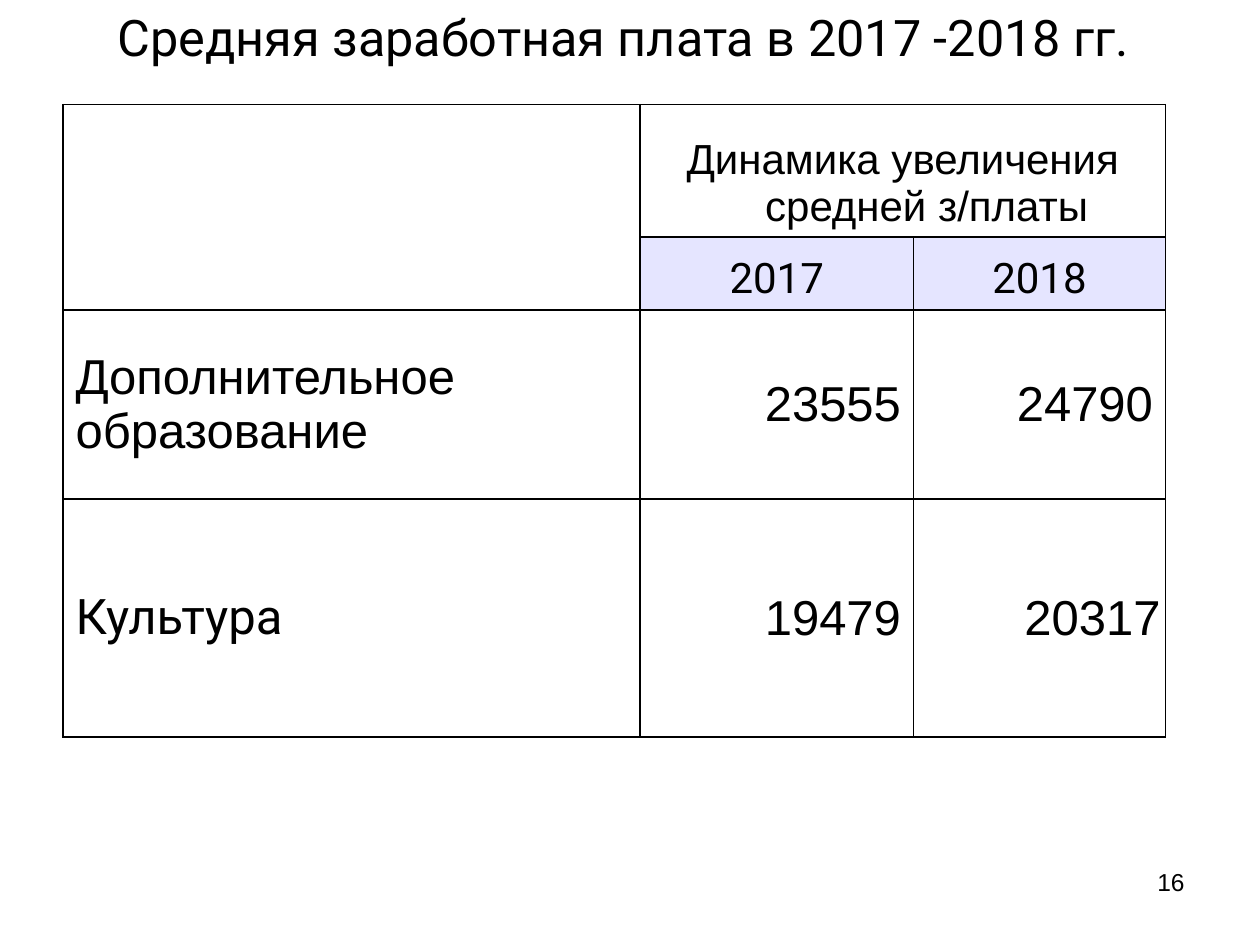
from pptx import Presentation
from pptx.dml.color import RGBColor
from pptx.enum.text import MSO_ANCHOR as Anchor, PP_ALIGN as Align
from pptx.oxml.ns import qn
from pptx.util import Inches, Pt
from lxml.etree import SubElement


def color(value):
    return RGBColor.from_string(value)


def write(tf, text, size=28, font="Arial", align=Align.LEFT, hang=0):
    tf.word_wrap = True
    p = tf.paragraphs[0]
    p.alignment = align
    if hang:
        pPr = p._p.get_or_add_pPr()
        pPr.set("marL", str(Inches(hang)))
        pPr.set("indent", str(-Inches(hang)))
    r = p.add_run()
    r.text = text
    r.font.size = Pt(size)
    r.font.name = font
    r.font.color.rgb = color("000000")


def add_text(s, box, text, anchor=Anchor.TOP, **fmt):
    sp = s.shapes.add_textbox(*map(Inches, box))
    sp.text_frame.vertical_anchor = anchor
    write(sp.text_frame, text, **fmt)


def style_cell(cell, fill="FFFFFF", line="000000", width=1):
    tcPr = cell._tc.get_or_add_tcPr()
    for side in ("lnL", "lnR", "lnT", "lnB"):
        ln = SubElement(tcPr, qn(f"a:{side}"), w=str(Pt(width)))
        SubElement(SubElement(ln, qn("a:solidFill")), qn("a:srgbClr"), val=line)
    cell.fill.solid()
    cell.fill.fore_color.rgb = color(fill)


def fill_cell(cell, text, anchor=Anchor.MIDDLE, inset=0.1, **fmt):
    cell.vertical_anchor = anchor
    cell.margin_left = cell.margin_right = Inches(inset)
    write(cell.text_frame, text, **fmt)


def add_salary_table(s, box):
    widths = [4.58, 2.17, 2]
    heights = [1.05, 0.58, 1.5, 1.89]
    table = s.shapes.add_table(len(heights), len(widths), *map(Inches, box)).table
    for col, width in zip(table.columns, widths):
        col.width = Inches(width)
    for row, height in zip(table.rows, heights):
        row.height = Inches(height)
    for i in range(len(heights)):
        for j in range(len(widths)):
            style_cell(table.cell(i, j), "E5E5FF" if i == 1 and j else "FFFFFF")
    table.cell(0, 0).merge(table.cell(1, 0))
    table.cell(0, 1).merge(table.cell(0, 2))

    header = dict(anchor=Anchor.BOTTOM, size=24, align=Align.CENTER, hang=0.38)
    fill_cell(table.cell(0, 1), "Динамика увеличения средней з/платы", **header)
    for j, year in enumerate(("2017", "2018"), 1):
        fill_cell(table.cell(1, j), year, font="Roboto", **header)

    rows = [
        ("Дополнительное образование", "Arial", 0, [("23555", 0.1), ("24790", 0.1)]),
        ("Культура", "Roboto", 0.38, [("19479", 0.1), ("20317", 0.04)]),
    ]
    for i, (name, font, hang, salaries) in enumerate(rows, 2):
        fill_cell(table.cell(i, 0), name, font=font, hang=hang)
        for j, (salary, inset) in enumerate(salaries, 1):
            fill_cell(table.cell(i, j), salary, inset=inset, align=Align.RIGHT, hang=0.38)


def main():
    prs = Presentation()
    prs.slide_width, prs.slide_height = Inches(10), Inches(7.5)
    s = prs.slides.add_slide(prs.slide_layouts[6])
    add_text(s, (0, 0, 10, 0.58), "Средняя заработная плата в 2017 -2018 гг. ",
             anchor=Anchor.MIDDLE, size=28.8, font="Roboto", align=Align.CENTER)
    add_salary_table(s, (0.5, 0.83, 8.75, 5.02))
    add_text(s, (7.17, 6.83, 2.33, 0.52), "16", size=14, align=Align.RIGHT)
    prs.save("out.pptx")


if __name__ == "__main__":
    main()
